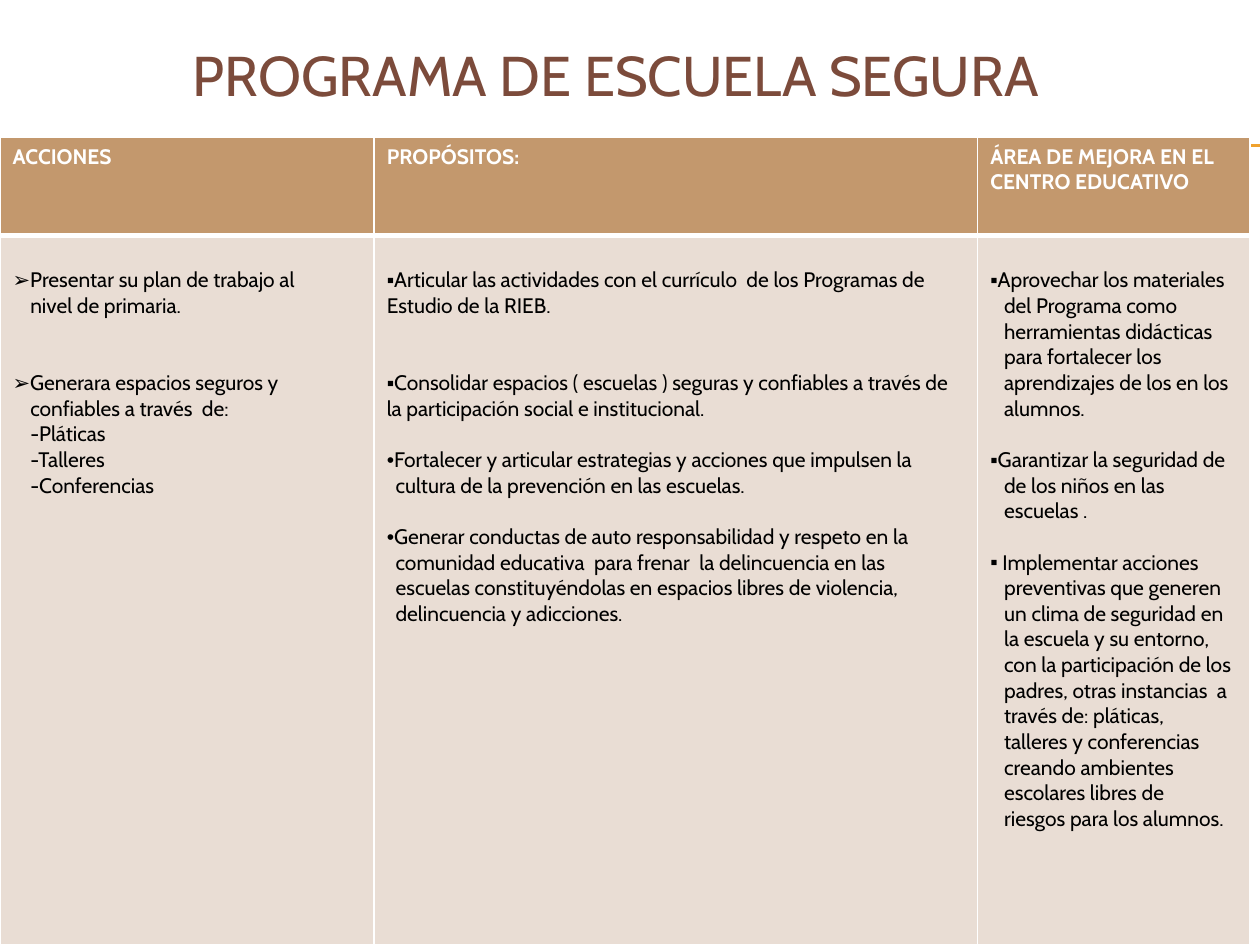
from lxml import etree
from pptx import Presentation
from pptx import util as u
from pptx.dml.color import RGBColor
from pptx.enum import shapes, text
from pptx.oxml import ns

WIDE, HIGH = 10, 7.5
LINE = 14.65  # height of one body line, in points

HEADS = ["ACCIONES", "PROPÓSITOS:", "ÁREA DE MEJORA EN EL CENTRO EDUCATIVO"]

# Each item: bullet, blank lines above, indent of later lines (inches), lines
BODY = [
    [
        ("➢", 0, 0.14, "Presentar su plan de trabajo al\nnivel de primaria."),
        ("➢", 2, 0.14, "Generara espacios seguros y\nconfiables a través  de:\n"
                       "-Pláticas\n-Talleres\n-Conferencias"),
    ],
    [
        ("▪", 0, 0, "Articular las actividades con el currículo  de los "
                    "Programas de Estudio de la RIEB."),
        ("▪", 2, 0, "Consolidar espacios ( escuelas ) seguras y confiables a "
                    "través de la participación social e institucional."),
        ("•", 1, 0.07, "Fortalecer y articular estrategias y acciones que impulsen la\n"
                       "cultura de la prevención en las escuelas."),
        ("•", 1, 0.07, "Generar conductas de auto responsabilidad y respeto en la\n"
                       "comunidad educativa  para frenar  la delincuencia en las\n"
                       "escuelas constituyéndolas en espacios libres de violencia,\n"
                       "delincuencia y adicciones."),
    ],
    [
        ("▪", 0, 0.11, "Aprovechar los materiales\ndel Programa como\n"
                       "herramientas didácticas\npara fortalecer los\n"
                       "aprendizajes de los en los\nalumnos."),
        ("▪", 1, 0.11, "Garantizar la seguridad de\nde los niños en las\nescuelas ."),
        ("▪", 1, 0.11, " Implementar acciones\npreventivas que generen\n"
                       "un clima de seguridad en\nla escuela y su entorno,\n"
                       "con la participación de los\npadres, otras instancias  a\n"
                       "través de: pláticas,\ntalleres y conferencias\n"
                       "creando ambientes\nescolares libres de\n"
                       "riesgos para los alumnos."),
    ],
]


def tint(code):
    return RGBColor.from_string(code)


class Deck:
    font = "Cabin"
    gold, brown, tan, sand = "F0A22E", "7C4B3B", "C3986D", "E9DDD4"
    white, black = "FFFFFF", "000000"

    def __init__(self):
        self.prs = Presentation()
        self.prs.slide_width, self.prs.slide_height = u.Inches(WIDE), u.Inches(HIGH)
        self.slide = self.prs.slides.add_slide(self.prs.slide_layouts[6])

    def at(self, x, y):
        """Turn shares of the slide into lengths."""
        return u.Inches(WIDE * x), u.Inches(HIGH * y)

    def style(self, para, size, color, bold=False):
        for run in para.runs:
            font = run.font
            font.name, font.size, font.bold = self.font, u.Pt(size), bold
            font.color.rgb = tint(color)

    def rule(self, x, y, end):
        line = self.slide.shapes.add_connector(
            shapes.MSO_CONNECTOR.STRAIGHT, *self.at(x, y), *self.at(end, y))
        line.line.color.rgb = tint(self.gold)
        line.line.width = u.Pt(0.75)
        etree.SubElement(line._element.spPr, ns.qn("a:effectLst"))

    def title(self, words, x, y, w, h):
        box = self.slide.shapes.add_textbox(*self.at(x, y), *self.at(w, h))
        frame = box.text_frame
        frame.word_wrap = True
        frame.vertical_anchor = text.MSO_ANCHOR.MIDDLE
        frame.text = words
        para = frame.paragraphs[0]
        para.alignment = text.PP_ALIGN.CENTER
        self.style(para, 32, self.brown)

    def grid(self, x, y, cols, rows):
        shape = self.slide.shapes.add_table(
            len(rows), len(cols), *self.at(x, y), *self.at(sum(cols), sum(rows)))
        table = shape.table
        for col, share in zip(table.columns, cols):
            col.width = u.Inches(WIDE * share)
        for row, share in zip(table.rows, rows):
            row.height = u.Inches(HIGH * share)
        return table

    def cell(self, cell, fill, top, base):
        """Fill a cell and give it white borders (widths in points)."""
        cell.fill.solid()
        cell.fill.fore_color.rgb = tint(fill)
        props = cell._tc.get_or_add_tcPr()
        for spot, (side, width) in enumerate(zip("LRTB", (1, 1, top, base))):
            edge = etree.Element(ns.qn("a:ln" + side), w=str(u.Pt(width)))
            solid = etree.SubElement(edge, ns.qn("a:solidFill"))
            etree.SubElement(solid, ns.qn("a:srgbClr"), val=self.white)
            props.insert(spot, edge)

    def head(self, cell, words):
        self.cell(cell, self.tan, 1, 3)
        cell.text_frame.text = words
        self.style(cell.text_frame.paragraphs[0], 12, self.white, True)

    def items(self, cell, items):
        self.cell(cell, self.sand, 3, 1)
        cell.margin_top = u.Inches(0.05) + u.Pt(LINE)
        frame = cell.text_frame
        para = frame.paragraphs[0]
        for mark, gap, pad, words in items:
            for num, line in enumerate(words.split("\n")):
                if para is None:
                    para = frame.add_paragraph()
                para.text = line
                self.style(para, 12, self.black)
                if num == 0:
                    para.space_before = u.Pt(gap * LINE)
                self.bullet(para, "" if num else mark, pad if num else 0)
                para = None

    def bullet(self, para, mark, pad):
        props = para._p.get_or_add_pPr()
        props.set("marL", str(u.Inches(pad)))
        props.set("indent", "0")
        if mark:
            etree.SubElement(props, ns.qn("a:buFont"), typeface="Arial")
            etree.SubElement(props, ns.qn("a:buChar"), char=mark)
        else:
            etree.SubElement(props, ns.qn("a:buNone"))


def main():
    deck = Deck()

    # Double rule behind the title
    for y in (1.15, 1.16):
        deck.rule(0.056, y / HIGH, 1)

    deck.title("PROGRAMA DE ESCUELA SEGURA", 0.039, 0, 0.9, 1.17 / HIGH)

    # Table of actions, purposes and areas to improve
    table = deck.grid(0, 1.09 / HIGH, (0.297, 0.479, 0.216),
                      (0.78 / HIGH, 5.63 / HIGH))
    for col, (words, items) in enumerate(zip(HEADS, BODY)):
        deck.head(table.cell(0, col), words)
        deck.items(table.cell(1, col), items)

    deck.prs.save("out.pptx")


if __name__ == "__main__":
    main()
